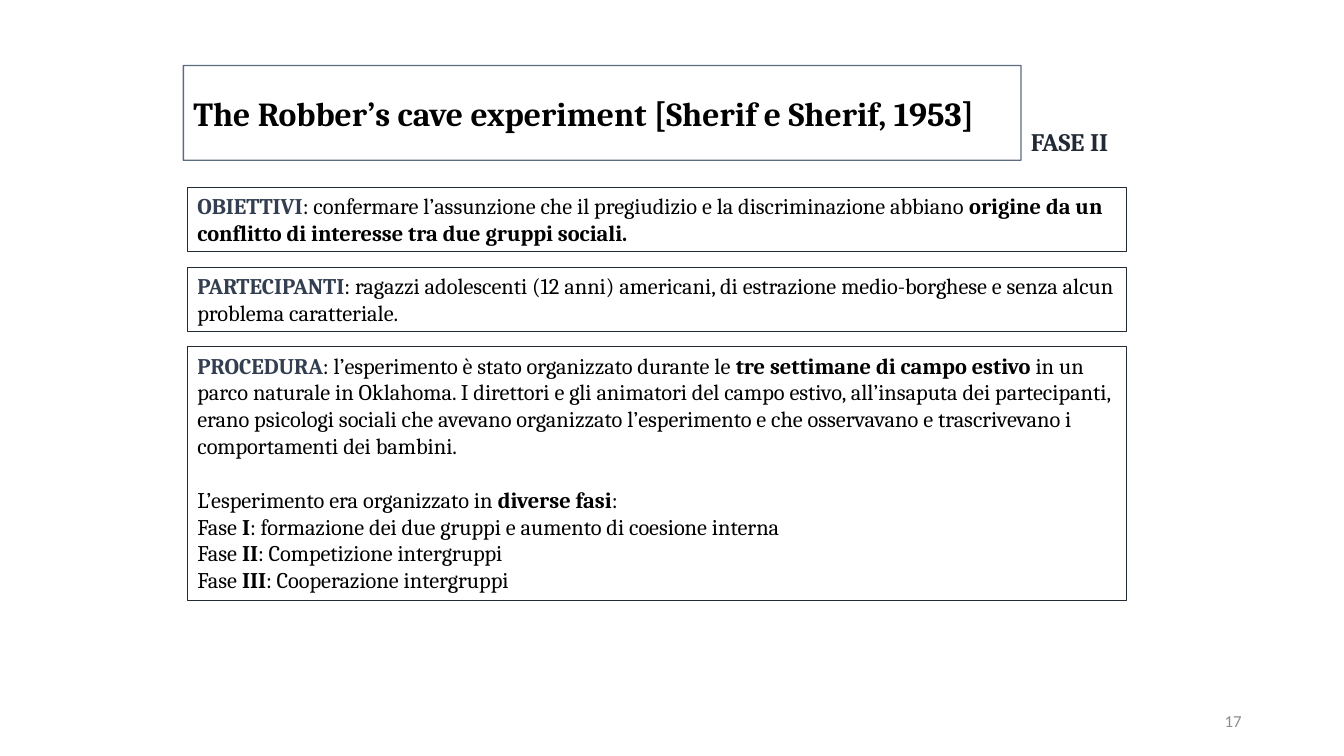
"""Build the slide on phase II of the Robber's cave experiment."""
from dataclasses import dataclass

from lxml import etree
from pptx import Presentation
from pptx import util as u
from pptx.dml.color import RGBColor
from pptx.enum import shapes, text
from pptx.oxml.ns import qn


@dataclass(frozen=True)
class Theme:
    """Fonts, colours and type sizes of the slide."""

    serif: str = "Cambria"
    sans: str = "Calibri"
    ink: str = "000000"
    label: str = "333F50"
    dark: str = "222A35"
    slate: str = "44546A"
    grey: str = "8C8C8C"
    title: int = 24
    phase: int = 18
    body: int = 16
    number: int = 12


THEME = Theme()
LEFT, WIDTH, GAP = 133.9, 671, 10.8
FIRST_TOP = 133.9
SECTIONS = [
    (46.1, "OBIETTIVI", [[
        (": confermare l’assunzione che il pregiudizio e la discriminazione abbiano ", False),
        ("origine da un conflitto di interesse tra due gruppi sociali.", True),
    ]]),
    (46.1, "PARTECIPANTI", [[
        (": ragazzi adolescenti (12 anni) americani, di estrazione medio-borghese "
         "e senza alcun problema caratteriale.", False),
    ]]),
    (181.4, "PROCEDURA", [
        [
            (": l’esperimento è stato organizzato durante le ", False),
            ("tre settimane di campo estivo ", True),
            ("in un parco naturale in Oklahoma. I direttori e gli animatori del campo "
             "estivo, all’insaputa dei partecipanti, erano psicologi sociali che avevano "
             "organizzato l’esperimento e che osservavano e trascrivevano i "
             "comportamenti dei bambini.", False),
        ],
        [("L’esperimento era organizzato in ", False), ("diverse fasi", True), (":", False)],
        [("Fase ", False), ("I", True),
         (": formazione dei due gruppi e aumento di coesione interna", False)],
        [("Fase ", False), ("II", True), (": Competizione intergruppi", False)],
        [("Fase ", False), ("III", True), (": Cooperazione intergruppi", False)],
    ]),
]


def apply(target, formats):
    """Set every attribute in formats on target."""
    for name, value in formats.items():
        setattr(target, name, value)


def add_run(paragraph, words, size, color=THEME.ink, bold=False, face=THEME.serif):
    """Append one formatted run to a paragraph."""
    run = paragraph.add_run()
    run.text = words
    apply(run.font, {"name": face, "size": u.Pt(size), "bold": bold})
    run.font.color.rgb = RGBColor.from_string(color)


def prepare(frame, anchor, align=text.PP_ALIGN.LEFT):
    """Wrap and anchor a text frame and return its first paragraph."""
    apply(frame, {"word_wrap": True, "vertical_anchor": anchor})
    opening = frame.paragraphs[0]
    opening.alignment = align
    return opening


def add_frame(slide, bounds, color, weight):
    """Add an unfilled outlined rectangle."""
    frame = slide.shapes.add_shape(
        shapes.MSO_SHAPE.RECTANGLE, *(u.Pt(length) for length in bounds))
    frame.shadow.inherit = False
    frame.fill.background()
    frame.line.color.rgb = RGBColor.from_string(color)
    frame.line.width = u.Pt(weight)
    return frame


def add_title(slide, words):
    """Add the framed title with its slightly transparent outline."""
    frame = add_frame(slide, (131, 46.8, 598.3, 67.7), THEME.slate, 1)
    tint = frame.line._ln.find(".//" + qn("a:srgbClr"))
    etree.SubElement(tint, qn("a:alpha"), val="86000")
    opening = prepare(frame.text_frame, text.MSO_ANCHOR.MIDDLE)
    add_run(opening, words, THEME.title, bold=True)


def add_label(slide, bounds, words, anchor, align, **style):
    """Add a single line of unframed text."""
    label = slide.shapes.add_textbox(*(u.Pt(length) for length in bounds))
    add_run(prepare(label.text_frame, anchor, align), words, **style)


def add_section(slide, top, height, heading, paragraphs):
    """Add a framed section that opens with a coloured heading."""
    frame = add_frame(slide, (LEFT, top, WIDTH, height), THEME.dark, 0.75).text_frame
    paragraph = prepare(frame, text.MSO_ANCHOR.TOP)
    add_run(paragraph, heading, THEME.body, THEME.label, True)
    for index, runs in enumerate(paragraphs):
        if index:
            paragraph = frame.add_paragraph()
            paragraph.alignment = text.PP_ALIGN.LEFT
        if index == 1:
            paragraph.space_before = u.Pt(19)
        for words, bold in runs:
            add_run(paragraph, words, THEME.body, bold=bold)


def main():
    """Build and save the slide."""
    deck = Presentation()
    apply(deck, {"slide_width": u.Pt(960), "slide_height": u.Pt(540)})
    slide = deck.slides.add_slide(deck.slide_layouts[6])
    add_label(slide, (678, 500.5, 216, 28.8), "17", text.MSO_ANCHOR.MIDDLE,
              text.PP_ALIGN.RIGHT, size=THEME.number, color=THEME.grey, face=THEME.sans)
    add_title(slide, "The Robber’s cave experiment [Sherif e Sherif, 1953]")
    add_label(slide, (729.3, 86.4, 79.2, 29), "FASE II", text.MSO_ANCHOR.TOP,
              text.PP_ALIGN.LEFT, size=THEME.phase, color=THEME.dark, bold=True)
    top = FIRST_TOP
    for height, heading, paragraphs in SECTIONS:
        add_section(slide, top, height, heading, paragraphs)
        top += height + GAP
    deck.save("out.pptx")


if __name__ == "__main__":
    main()
